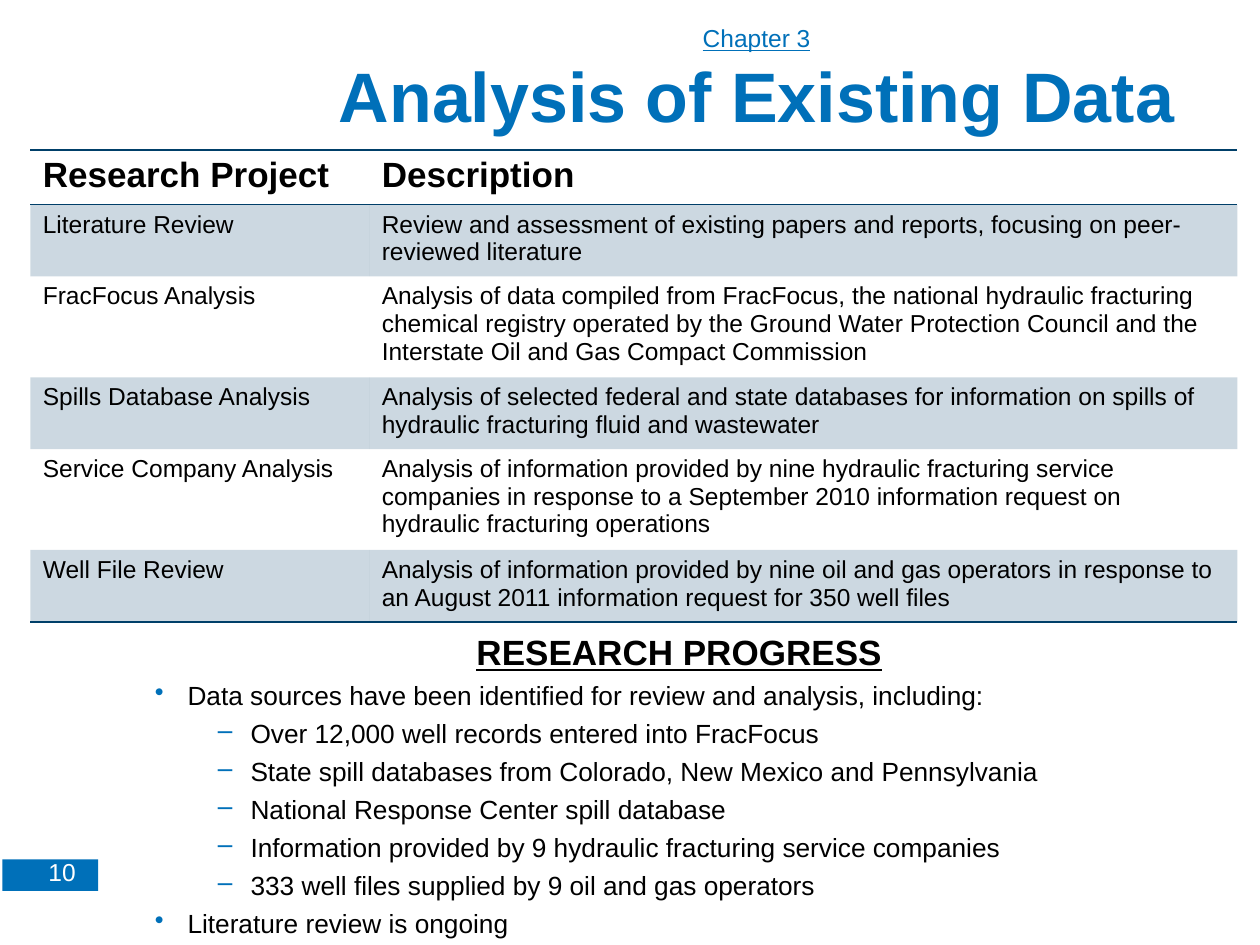
from dataclasses import dataclass

from lxml import etree
from pptx import Presentation
from pptx.dml.color import RGBColor
from pptx.enum import shapes, text
from pptx.oxml import ns
from pptx.util import Inches, Pt


@dataclass(frozen=True)
class Theme:
    font: str = "Arial"
    blue: str = "0070B9"
    navy: str = "003F69"
    black: str = "000000"
    white: str = "FFFFFF"
    band_alpha: int = 20
    title: int = 40
    heading: int = 20
    body: int = 15
    small: int = 14


THEME = Theme()
NO_STYLE = "{2D5ABB26-0587-4C30-8999-92F81FD0307C}"

# Each project: row height, name, description
PROJECTS = [
    (0.57, "Literature Review",
     "Review and assessment of existing papers and reports, focusing on "
     "peer-reviewed literature"),
    (0.8, "FracFocus Analysis",
     "Analysis of data compiled from FracFocus, the national hydraulic fracturing "
     "chemical registry operated by the Ground Water Protection Council and the "
     "Interstate Oil and Gas Compact Commission"),
    (0.57, "Spills Database Analysis",
     "Analysis of selected federal and state databases for information on spills of "
     "hydraulic fracturing fluid and wastewater"),
    (0.8, "Service Company Analysis",
     "Analysis of information provided by nine hydraulic fracturing service companies "
     "in response to a September 2010 information request on hydraulic fracturing "
     "operations"),
    (0.57, "Well File Review",
     "Analysis of information provided by nine oil and gas operators in response to an "
     "August 2011 information request for 350 well files"),
]

# Each point: level, wording
PROGRESS = [
    (0, "Data sources have been identified for review and analysis, including:"),
    (1, "Over 12,000 well records entered into FracFocus"),
    (1, "State spill databases from Colorado, New Mexico and Pennsylvania"),
    (1, "National Response Center spill database"),
    (1, "Information provided by 9 hydraulic fracturing service companies"),
    (1, "333 well files supplied by 9 oil and gas operators"),
    (0, "Literature review is ongoing"),
]


def add_span(para, wording, size, color=THEME.black, bold=False, underline=False):
    span = para.add_run()
    span.text = wording
    font = span.font
    font.name, font.size = THEME.font, Pt(size)
    font.bold, font.underline = bold, underline
    font.color.rgb = RGBColor.from_string(color)


def add_text_frame(page, box):
    frame = page.shapes.add_textbox(*map(Inches, box)).text_frame
    frame.word_wrap = True
    frame.vertical_anchor = text.MSO_ANCHOR.MIDDLE
    return frame


def add_element(parent, tag, **attributes):
    return etree.SubElement(parent, ns.qn(tag), attributes)


def add_page_number(page, bar_box, number_box):
    bar = page.shapes.add_shape(shapes.MSO_SHAPE.RECTANGLE, *map(Inches, bar_box))
    bar.shadow.inherit = False
    bar.fill.solid()
    bar.fill.fore_color.rgb = RGBColor.from_string(THEME.blue)
    bar.line.fill.background()
    para = add_text_frame(page, number_box).paragraphs[0]
    para.alignment = text.PP_ALIGN.RIGHT
    add_span(para, "10", THEME.small, THEME.white)


def add_title(page, box):
    frame = add_text_frame(page, box)
    chapter, title = frame.paragraphs[0], frame.add_paragraph()
    chapter.alignment = title.alignment = text.PP_ALIGN.CENTER
    add_span(chapter, "Chapter 3", THEME.small, THEME.blue, underline=True)
    add_span(title, "Analysis of Existing Data", THEME.title, THEME.blue, bold=True)


def add_border(cell, tag):
    line = add_element(cell._tc.get_or_add_tcPr(), tag, w=str(Pt(1)))
    add_element(add_element(line, "a:solidFill"), "a:srgbClr", val=THEME.navy)


def style_cell(cell, borders, banded):
    for tag in borders:
        add_border(cell, tag)
    if not banded:
        cell.fill.background()
        return
    cell.fill.solid()
    cell.fill.fore_color.rgb = RGBColor.from_string(THEME.navy)
    color = cell._tc.tcPr.find(ns.qn("a:solidFill"))[0]
    add_element(color, "a:alpha", val=str(THEME.band_alpha * 1000))


def add_projects(page, box):
    rows = [(0.43, "Research Project", "Description"), *PROJECTS]
    table = page.shapes.add_table(len(rows), 2, *map(Inches, box)).table
    table.first_row = table.horz_banding = False
    table._tbl.tblPr.find(ns.qn("a:tableStyleId")).text = NO_STYLE
    name_width = 2.69
    for column, width in zip(table.columns, (name_width, box[2] - name_width)):
        column.width = Inches(width)
    for index, (height, *wordings) in enumerate(rows):
        table.rows[index].height = Inches(height)
        header, last = index == 0, index == len(rows) - 1
        borders = ["a:lnT", "a:lnB"] if header else ["a:lnB"] if last else []
        size = THEME.heading if header else THEME.small
        for cell, wording in zip(table.rows[index].cells, wordings):
            style_cell(cell, borders, index % 2 == 1)
            add_span(cell.text_frame.paragraphs[0], wording, size, bold=header)


def indent(para, level, bullet=None):
    para.level = level
    props = para._p.get_or_add_pPr()
    props.set("marL", str(Inches(0.26 + 0.5 * level)))
    props.set("indent", str(Inches(-0.26)))
    if bullet:
        add_element(add_element(props, "a:buClr"), "a:srgbClr", val=THEME.blue)
        add_element(props, "a:buChar", char=bullet)
    tabs = add_element(props, "a:tabLst")
    add_element(tabs, "a:tab", pos=str(Inches(1.76)), algn="l")


def add_progress(page, box):
    frame = add_text_frame(page, box)
    heading = frame.paragraphs[0]
    heading.alignment = text.PP_ALIGN.CENTER
    indent(heading, 0)
    add_span(heading, "RESEARCH PROGRESS", THEME.heading, bold=True, underline=True)
    for level, wording in PROGRESS:
        para = frame.add_paragraph()
        indent(para, level, "•–"[level])
        para.space_before = Pt(3.7)
        add_span(para, wording, THEME.body)


def main():
    deck = Presentation()
    deck.slide_width, deck.slide_height = Inches(10), Inches(7.5)
    page = deck.slides.add_slide(deck.slide_layouts[6])
    add_page_number(page, (0.02, 6.82, 0.76, 0.25), (0, 6.78, 0.7, 0.28))
    add_title(page, (2.47, 0.13, 7.07, 1.01))
    add_projects(page, (0.24, 1.19, 9.58, 3.74))
    add_progress(page, (1.13, 4.98, 8.52, 2.5))
    deck.save("out.pptx")


if __name__ == "__main__":
    main()
